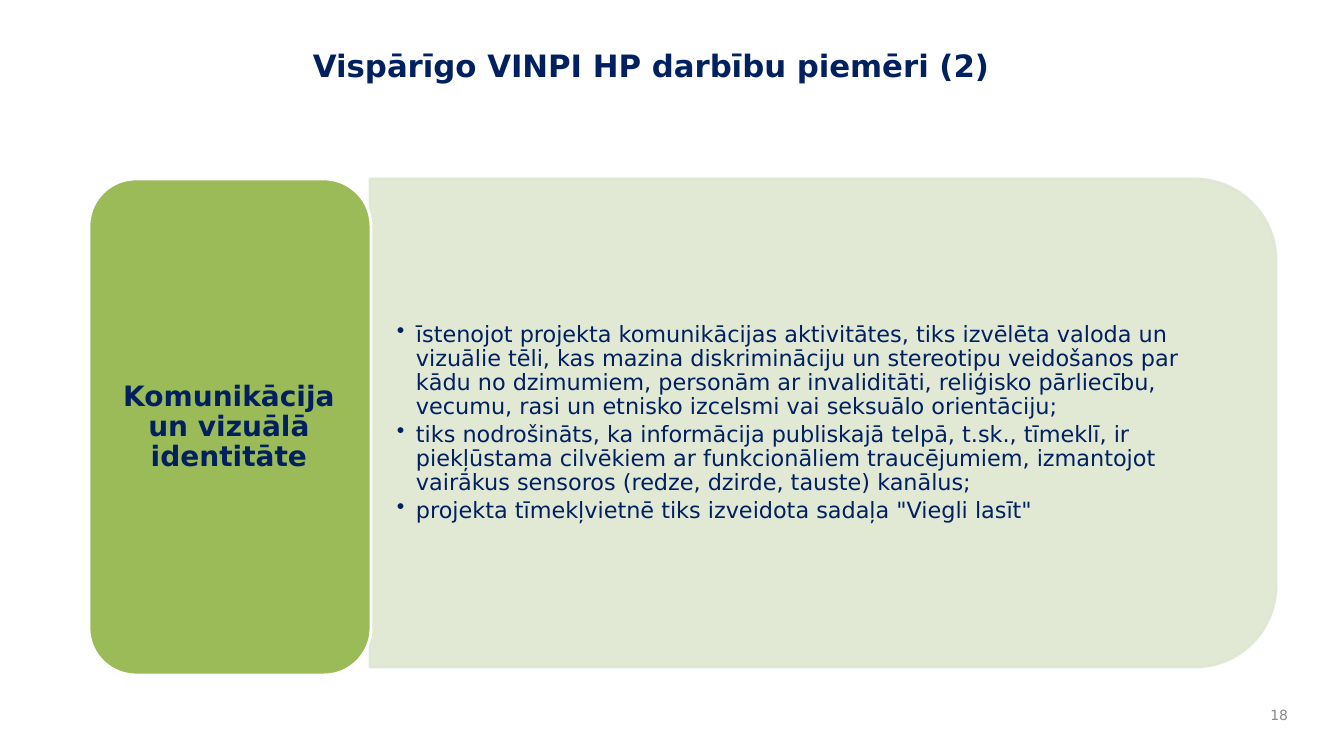
from lxml import etree
from pptx import Presentation
from pptx.dml.color import RGBColor
from pptx.enum.shapes import MSO_SHAPE
from pptx.enum.text import MSO_ANCHOR, PP_ALIGN
from pptx.oxml.ns import qn
from pptx.util import Emu, Pt

LEFT, CENTER, RIGHT = PP_ALIGN.LEFT, PP_ALIGN.CENTER, PP_ALIGN.RIGHT
TOP, MIDDLE = MSO_ANCHOR.TOP, MSO_ANCHOR.MIDDLE
ROUNDED, ROUNDED_TOP = MSO_SHAPE.ROUNDED_RECTANGLE, MSO_SHAPE.ROUND_2_SAME_RECTANGLE

TITLE = "Vispārīgo VINPI HP darbību piemēri (2)"
TOPIC = "Komunikācija un vizuālā identitāte"
ACTIONS = [
    "īstenojot projekta komunikācijas aktivitātes, tiks izvēlēta valoda un "
    "vizuālie tēli, kas mazina diskrimināciju un stereotipu veidošanos par "
    "kādu no dzimumiem, personām ar invaliditāti, reliģisko pārliecību, "
    "vecumu, rasi un etnisko izcelsmi vai seksuālo orientāciju;",
    "tiks nodrošināts, ka informācija publiskajā telpā, t.sk., tīmeklī, ir "
    "piekļūstama cilvēkiem ar funkcionāliem traucējumiem, izmantojot "
    "vairākus sensoros (redze, dzirde, tauste) kanālus;",
    'projekta tīmekļvietnē tiks izveidota sadaļa "Viegli lasīt"',
]
PAGE_NUMBER = "18"

FONT = "DejaVu Sans"
NAVY, GREEN, PALE_GREEN, WHITE, GRAY = "002060", "9BBB59", "DEE7D1", "FFFFFF", "898989"

SLIDE_SIZE = (1344, 756)
TITLE_BOX = (303, 42, 973, 114)
PANEL = (370, 179, 906, 488)
ACTIONS_BOX = (370, 203, 882, 440)
TOPIC_CARD = (89, 179, 282, 496)
TOPIC_BOX = (102, 193, 254, 469)
NUMBER_BOX = (1254, 698, 44, 33)
BULLET_INDENT = 19
SCALE = 12192000 / SLIDE_SIZE[0]


def px(length):
    return Emu(round(length * SCALE))


def color(hex_value):
    return RGBColor.from_string(hex_value)


def add_block(kind, box, fill, line, opacity=100):
    block = slide.shapes.add_shape(kind, *map(px, box))
    block.shadow.inherit = False
    block.fill.solid()
    block.fill.fore_color.rgb = color(fill)
    block.line.color.rgb = color(line)
    block.line.width = Pt(2)
    if opacity < 100:
        for tint in block._element.spPr.iter(qn("a:srgbClr")):
            etree.SubElement(tint, qn("a:alpha"), val=str(opacity * 1000))
    return block


def add_bullet(paragraph):
    properties = paragraph._p.get_or_add_pPr()
    properties.set("marL", str(px(BULLET_INDENT)))
    properties.set("indent", str(-px(BULLET_INDENT)))
    etree.SubElement(properties, qn("a:buChar"), char="•")


def add_text(box, lines, size, ink, bold=False, align=LEFT, anchor=MIDDLE,
             insets=(10, 5), spacing=1.0, after=0, bulleted=False):
    frame = slide.shapes.add_textbox(*map(px, box)).text_frame
    frame.word_wrap = True
    frame.vertical_anchor = anchor
    frame.margin_left = frame.margin_right = px(insets[0])
    frame.margin_top = frame.margin_bottom = px(insets[1])
    for index, line in enumerate(lines):
        paragraph = frame.add_paragraph() if index else frame.paragraphs[0]
        if bulleted:
            add_bullet(paragraph)
        paragraph.alignment = align
        paragraph.line_spacing = spacing
        paragraph.space_after = Pt(after)
        run = paragraph.add_run()
        run.text = line
        run.font.name = FONT
        run.font.size = Pt(size)
        run.font.bold = bold
        run.font.color.rgb = color(ink)


def turned(box):
    """Return the frame that fills box after a quarter turn about its centre."""
    left, top, width, height = box
    shift = (width - height) / 2
    return left + shift, top - shift, height, width


deck = Presentation()
deck.slide_width, deck.slide_height = map(px, SLIDE_SIZE)
slide = deck.slides.add_slide(deck.slide_layouts[6])

add_text(TITLE_BOX, [TITLE], 22, NAVY, bold=True, anchor=TOP)
panel = add_block(ROUNDED_TOP, turned(PANEL), PALE_GREEN, PALE_GREEN, opacity=90)
panel.rotation = 90
add_text(ACTIONS_BOX, ACTIONS, 16, NAVY, insets=(27, 14), spacing=0.9,
         after=2.4, bulleted=True)
add_block(ROUNDED, TOPIC_CARD, GREEN, WHITE)
add_text(TOPIC_BOX, [TOPIC], 20, NAVY, bold=True, align=CENTER,
         insets=(8, 4), spacing=0.9)
add_text(NUMBER_BOX, [PAGE_NUMBER], 10, GRAY, align=RIGHT)

deck.save("out.pptx")
